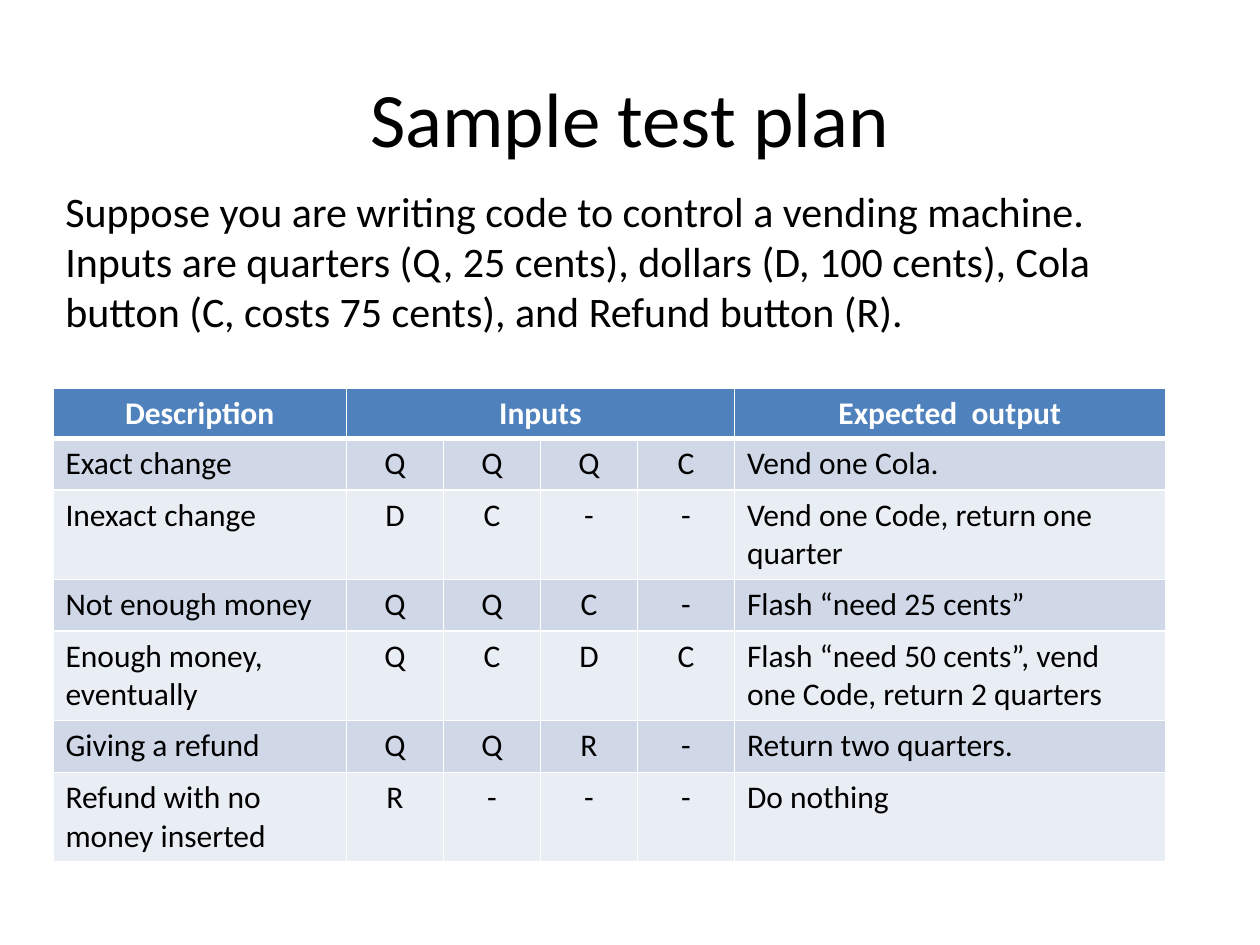
from lxml import etree
from pptx import Presentation
from pptx.dml.color import RGBColor
from pptx.enum.text import MSO_ANCHOR, PP_ALIGN
from pptx.oxml.ns import qn
from pptx.util import Inches, Pt

LEFT, CENTER = PP_ALIGN.LEFT, PP_ALIGN.CENTER
TOP, MIDDLE = MSO_ANCHOR.TOP, MSO_ANCHOR.MIDDLE

FONT = "Calibri"
COLORS = {
    "text": "000000",
    "header_text": "FFFFFF",
    "header": "4F81BD",
    "odd_row": "D0D8E8",
    "even_row": "E9EDF4",
    "border": "FFFFFF",
}

TITLE = "Sample test plan"
INTRODUCTION = (
    "Suppose you are writing code to control a vending machine.  "
    "Inputs are quarters (Q, 25 cents), dollars (D, 100 cents), Cola button "
    "(C, costs 75 cents), and Refund button (R)."
)
HEADER = ["Description", "Inputs", "", "", "", "Expected  output"]
TEST_CASES = [
    ("Exact change", "QQQC", "Vend one Cola."),
    ("Inexact change", "DC--", "Vend one Code, return one quarter"),
    ("Not enough money", "QQC-", "Flash “need 25 cents”"),
    ("Enough money, eventually", "QCDC",
     "Flash “need 50 cents”, vend one Code, return 2 quarters"),
    ("Giving a refund", "QQR-", "Return two quarters."),
    ("Refund with no money inserted", "R---", "Do nothing"),
]
COLUMN_WIDTHS = [2.33] + [0.77] * 4 + [3.42]
ROW_HEIGHTS = [0.4, 0.41, 0.71, 0.41, 0.71, 0.41, 0.71]


def write_text(text_frame, text, size, color="text", alignment=LEFT, bold=False):
    paragraph = text_frame.paragraphs[0]
    paragraph.alignment = alignment
    run = paragraph.add_run()
    run.text = text
    run.font.name = FONT
    run.font.size = Pt(size)
    run.font.bold = bold
    run.font.color.rgb = RGBColor.from_string(COLORS[color])


def add_text_box(slide, box, text, size, alignment=LEFT, anchor=TOP):
    shape = slide.shapes.add_textbox(*map(Inches, box))
    text_frame = shape.text_frame
    text_frame.word_wrap = True
    text_frame.vertical_anchor = anchor
    write_text(text_frame, text, size, alignment=alignment)
    return shape


def set_borders(cell, widths):
    properties = cell._tc.get_or_add_tcPr()
    for side, width in widths.items():
        line = etree.SubElement(properties, qn(f"a:ln{side}"), w=str(Pt(width)))
        fill = etree.SubElement(line, qn("a:solidFill"))
        etree.SubElement(fill, qn("a:srgbClr"), val=COLORS["border"])


def style_cell(cell, fill, border_widths):
    set_borders(cell, border_widths)
    cell.fill.solid()
    cell.fill.fore_color.rgb = RGBColor.from_string(COLORS[fill])


def add_test_table(slide):
    rows = [HEADER] + [[name, *inputs, output] for name, inputs, output in TEST_CASES]
    frame = slide.shapes.add_table(
        len(rows), len(HEADER), Inches(0.42), Inches(3.08),
        Inches(sum(COLUMN_WIDTHS)), Inches(sum(ROW_HEIGHTS)),
    )
    table = frame.table
    for column, width in zip(table.columns, COLUMN_WIDTHS):
        column.width = Inches(width)
    for row, height in zip(table.rows, ROW_HEIGHTS):
        row.height = Inches(height)
    table.cell(0, 1).merge(table.cell(0, 4))

    for row_index, row in enumerate(rows):
        is_header = row_index == 0
        fill = "header" if is_header else "odd_row" if row_index % 2 else "even_row"
        borders = {
            "L": 1,
            "R": 1,
            "T": 3 if row_index == 1 else 1,
            "B": 3 if is_header else 1,
        }
        for column_index, text in enumerate(row):
            cell = table.cell(row_index, column_index)
            style_cell(cell, fill, borders)
            if text:
                is_centered = is_header or 1 <= column_index <= 4
                write_text(
                    cell.text_frame, text, 18,
                    color="header_text" if is_header else "text",
                    alignment=CENTER if is_centered else LEFT,
                    bold=is_header,
                )


def main():
    presentation = Presentation()
    presentation.slide_width = Inches(10)
    presentation.slide_height = Inches(7.5)
    slide = presentation.slides.add_slide(presentation.slide_layouts[6])

    add_text_box(slide, (0.5, 0.3, 9, 1.25), TITLE, 44, CENTER, MIDDLE)
    add_text_box(slide, (0.42, 1.42, 9, 1.5), INTRODUCTION, 24)
    add_test_table(slide)

    presentation.save("out.pptx")


if __name__ == "__main__":
    main()
